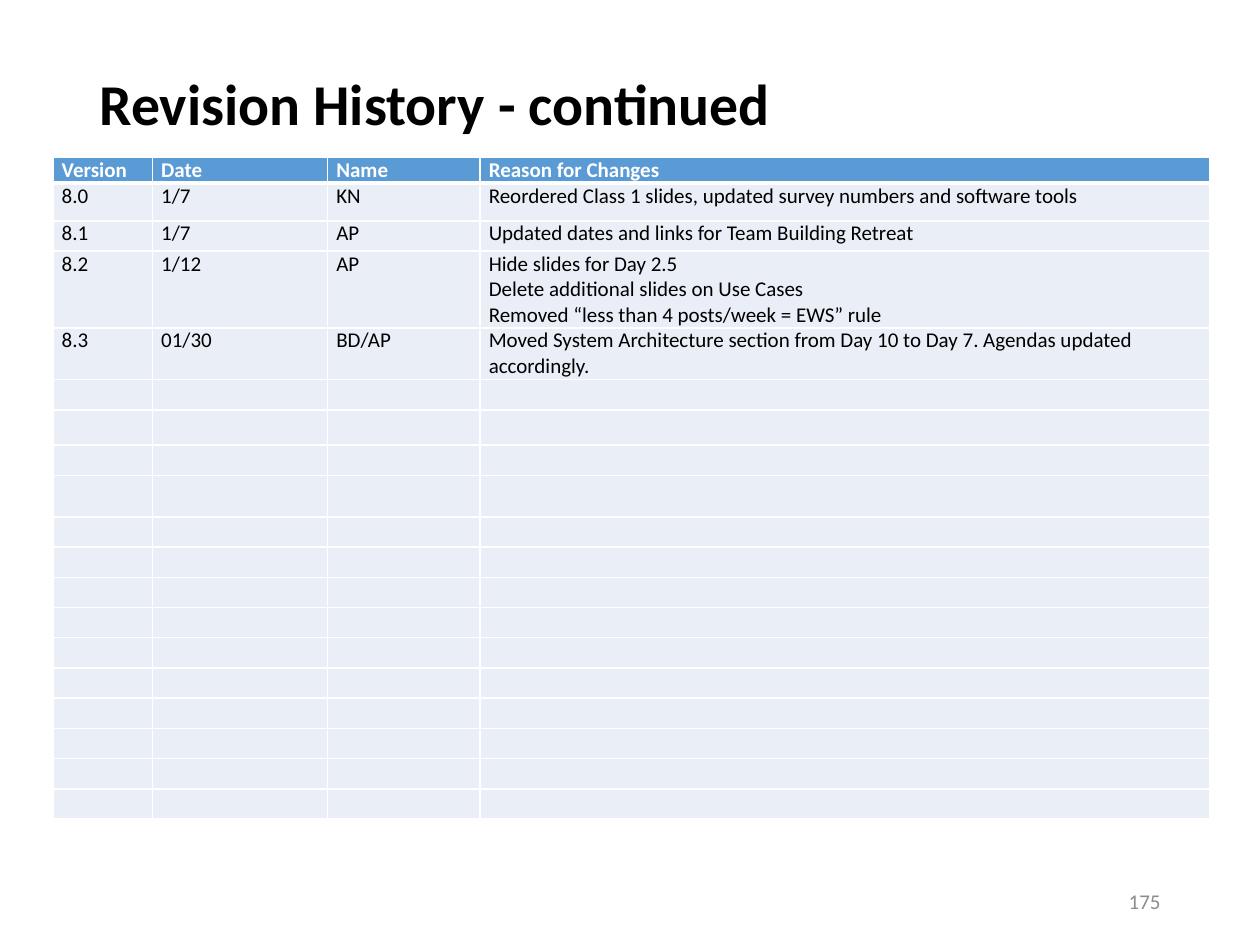
from dataclasses import dataclass

from lxml.etree import SubElement
from pptx import Presentation
from pptx.dml.color import RGBColor
from pptx.enum.text import MSO_ANCHOR, PP_ALIGN
from pptx.oxml.ns import qn
from pptx.util import Inches, Pt


@dataclass(frozen=True)
class Theme:
    font: str = "Calibri"
    title_size: int = 33
    body_size: int = 12
    black: str = "000000"
    white: str = "FFFFFF"
    gray: str = "8C8C8C"
    header_fill: str = "5B9BD5"
    row_fill: str = "EAEFF7"


def apply_format(target, values):
    for name, value in values.items():
        setattr(target, name, value)


class SlideBuilder:
    def __init__(self, slide, theme):
        self.slide = slide
        self.theme = theme

    def format_font(self, font, size, color, bold=False):
        apply_format(font, {"name": self.theme.font, "size": Pt(size), "bold": bold})
        font.color.rgb = RGBColor.from_string(color)

    def add_title(self, text, left, top, width, height):
        title = self.slide.shapes.title
        apply_format(title, {
            "left": Inches(left), "top": Inches(top),
            "width": Inches(width), "height": Inches(height),
        })
        frame = title.text_frame
        frame.text = text
        apply_format(frame, {
            "word_wrap": True,
            "vertical_anchor": MSO_ANCHOR.MIDDLE,
            "margin_bottom": Inches(0.6),
        })
        paragraph = frame.paragraphs[0]
        apply_format(paragraph, {"alignment": PP_ALIGN.LEFT, "line_spacing": 0.9})
        self.format_font(paragraph.runs[0].font, self.theme.title_size, self.theme.black, True)

    def add_page_number(self, text, left, top, width, height):
        box = self.slide.shapes.add_textbox(
            Inches(left), Inches(top), Inches(width), Inches(height))
        frame = box.text_frame
        frame.text = text
        apply_format(frame, {"word_wrap": True, "vertical_anchor": MSO_ANCHOR.MIDDLE})
        paragraph = frame.paragraphs[0]
        paragraph.alignment = PP_ALIGN.RIGHT
        self.format_font(paragraph.runs[0].font, self.theme.body_size, self.theme.gray)

    def add_borders(self, cell, is_header, is_first_body):
        properties = cell._tc.get_or_add_tcPr()
        widths = {
            "lnL": 1, "lnR": 1,
            "lnT": 3 if is_first_body else 1,
            "lnB": 3 if is_header else 1,
        }
        for side, width in widths.items():
            line = SubElement(properties, qn(f"a:{side}"), w=str(Pt(width)))
            fill = SubElement(line, qn("a:solidFill"))
            SubElement(fill, qn("a:srgbClr"), val=self.theme.white)

    def fill_cell(self, cell, text, row_index):
        theme = self.theme
        is_header = row_index == 0
        apply_format(cell, {
            "text": text,
            "margin_left": Inches(0.07), "margin_right": Inches(0.07),
            "margin_top": 0, "margin_bottom": 0,
        })
        self.add_borders(cell, is_header, row_index == 1)
        cell.fill.solid()
        cell.fill.fore_color.rgb = RGBColor.from_string(
            theme.header_fill if is_header else theme.row_fill)
        color = theme.white if is_header else theme.black
        for paragraph in cell.text_frame.paragraphs:
            for run in paragraph.runs:
                self.format_font(run.font, theme.body_size, color, is_header)
            if not paragraph.runs:
                SubElement(paragraph._p, qn("a:endParaRPr"), sz=str(theme.body_size * 100))

    def add_table(self, rows, left, top, column_widths, row_heights):
        table = self.slide.shapes.add_table(
            len(row_heights), len(column_widths), Inches(left), Inches(top),
            Inches(sum(column_widths)), Inches(sum(row_heights))).table
        for column, width in zip(table.columns, column_widths):
            column.width = Inches(width)
        blank_row = [""] * len(column_widths)
        for row_index, height in enumerate(row_heights):
            row = table.rows[row_index]
            row.height = Inches(height)
            texts = rows[row_index] if row_index < len(rows) else blank_row
            for cell, text in zip(row.cells, texts):
                self.fill_cell(cell, text, row_index)


REVISIONS = [
    ["Version", "Date", "Name", "Reason for Changes"],
    ["8.0", "1/7", "KN", "Reordered Class 1 slides, updated survey numbers and software tools"],
    ["8.1", "1/7", "AP", "Updated dates and links for Team Building Retreat"],
    ["8.2", "1/12", "AP", "Hide slides for Day 2.5\nDelete additional slides on Use Cases\n"
                          "Removed “less than 4 posts/week = EWS” rule"],
    ["8.3", "01/30", "BD/AP", "Moved System Architecture section from Day 10 to Day 7. "
                              "Agendas updated accordingly."],
]
COLUMN_WIDTHS = [0.79, 1.39, 1.21, 5.79]
ROW_HEIGHTS = [0.2, 0.3, 0.24, 0.61, 0.41, 0.24, 0.28, 0.24, 0.33] + [0.24] * 10


def main():
    presentation = Presentation()
    apply_format(presentation, {"slide_width": Inches(10), "slide_height": Inches(7.5)})
    slide = presentation.slides.add_slide(presentation.slide_layouts[5])
    builder = SlideBuilder(slide, Theme())
    builder.add_title("Revision History - continued", 0.69, 0.4, 8.62, 1.45)
    builder.add_table(REVISIONS, 0.42, 1.25, COLUMN_WIDTHS, ROW_HEIGHTS)
    builder.add_page_number("175", 7.06, 6.95, 2.25, 0.4)
    presentation.save("out.pptx")


if __name__ == "__main__":
    main()
